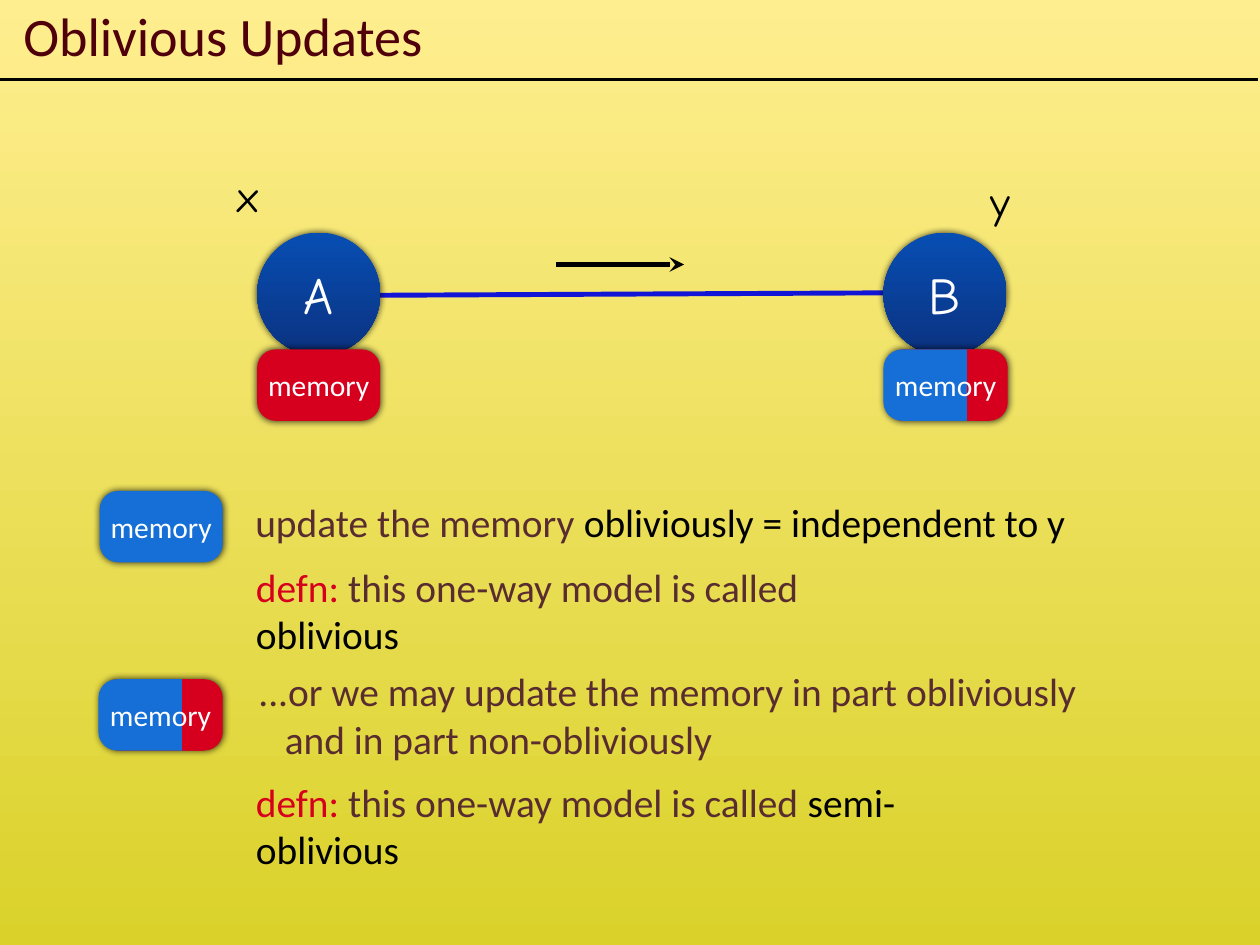
from pptx import Presentation
from pptx import util as u
from pptx.dml import color
from pptx.enum import shapes, text
from pptx.oxml import ns
from lxml import etree

BLACK = color.RGBColor(0x00, 0x00, 0x00)
WHITE = color.RGBColor(0xFF, 0xFF, 0xFF)
MAROON = color.RGBColor(0x50, 0x00, 0x0B)
BROWN = color.RGBColor(0x59, 0x2D, 0x30)
RED = color.RGBColor(0xD6, 0x00, 0x1E)
BLUE = color.RGBColor(0x15, 0x6F, 0xD6)
LINK_BLUE = color.RGBColor(0x12, 0x15, 0xD6)
NODE_TOP = color.RGBColor(0x07, 0x4E, 0xB3)
NODE_BOTTOM = color.RGBColor(0x0B, 0x32, 0x80)
SKY_TOP = color.RGBColor(0xFF, 0xEE, 0x8F)
SKY_BOTTOM = color.RGBColor(0xDA, 0xD2, 0x2B)

LEFT = text.PP_ALIGN.LEFT
CENTER = text.PP_ALIGN.CENTER
ROUNDED = shapes.MSO_SHAPE.ROUNDED_RECTANGLE
MEMORY_W, MEMORY_H = 100, 58
NODE_SIZE = 100
NODE_TOP_Y, NODE_MEMORY_Y = 189, 284


def write(box, runs, size, font="Calibri", align=LEFT):
    frame = box.text_frame
    frame.word_wrap = True
    frame.vertical_anchor = text.MSO_ANCHOR.MIDDLE
    frame.margin_left = frame.margin_right = 0
    frame.margin_top = frame.margin_bottom = 0
    para = frame.paragraphs[0]
    para.alignment = align
    for words, ink in runs:
        span = para.add_run()
        span.text = words
        span.font.size = u.Pt(size)
        span.font.name = font
        span.font.color.rgb = ink
    return para


def add_block(parent, kind, bounds, fills, shadow=True):
    block = parent.add_shape(kind, *map(u.Pt, bounds))
    if kind == ROUNDED:
        block.adjustments[0] = 0.26
    if len(fills) == 2:
        block.fill.gradient()
        block.fill.gradient_angle = 270
        for stop, shade in zip(block.fill.gradient_stops, fills):
            stop.color.rgb = shade
    else:
        block.fill.solid()
        block.fill.fore_color.rgb = fills[0]
    block.line.fill.background()
    block.shadow.inherit = False
    if shadow:
        effects = block.element.spPr.find(ns.qn("a:effectLst"))
        glow = etree.SubElement(effects, ns.qn("a:outerShdw"), blurRad=str(u.Pt(6)),
                                dist="0", dir="0", algn="ctr", rotWithShape="0")
        tint = etree.SubElement(glow, ns.qn("a:srgbClr"), val="000000")
        etree.SubElement(tint, ns.qn("a:alpha"), val="80000")
    return block


deck = Presentation()
deck.slide_width, deck.slide_height = u.Pt(1024), u.Pt(768)
page = deck.slides.add_slide(deck.slide_layouts[6])
sky = page.background.fill
sky.gradient()
sky.gradient_angle = 270
for stop, shade in zip(sky.gradient_stops, (SKY_TOP, SKY_BOTTOM)):
    stop.color.rgb = shade

lines = [
    ((0, 64.8, 1022, 64.8), BLACK, 2, False),
    ((304, 240, 719, 238), LINK_BLUE, 4, False),
    ((452, 215, 556, 215), BLACK, 4, True),
]
for ends, ink, width, arrow in lines:
    line = page.shapes.add_connector(shapes.MSO_CONNECTOR.STRAIGHT, *map(u.Pt, ends))
    line.line.color.rgb = ink
    line.line.width = u.Pt(width)
    properties = line.element.spPr
    if arrow:
        etree.SubElement(properties.find(ns.qn("a:ln")), ns.qn("a:tailEnd"), type="stealth")
    etree.SubElement(properties, ns.qn("a:effectLst"))

labels = [
    ((19, -1, 1008, 58), [("Oblivious Updates", MAROON)], 44, "Calibri"),
    ((193, 127, 30, 62), [("x", BLACK)], 36, "Comic Neue"),
    ((805, 132, 29, 62), [("y", BLACK)], 36, "Comic Neue"),
    ((207.5, 402, 667, 44),
     [("update the memory ", BROWN), ("obliviously = independent to y", BLACK)], 32, "Calibri"),
]
for top, width, term in [(474, 555, "oblivious"), (649, 620, "semi-oblivious")]:
    definition = [("defn: ", RED), ("this one-way model is called ", BROWN), (term, BLACK)]
    labels.append(((208, top, width, 44), definition, 32, "Calibri"))
for bounds, runs, size, font in labels:
    write(page.shapes.add_textbox(*map(u.Pt, bounds)), runs, size, font)

partial = page.shapes.add_textbox(*map(u.Pt, (210, 541, 814, 80)))
para = write(partial, [("...or we may update the memory in part obliviously", BROWN)], 32)
para.add_line_break()
write(partial, [("and in part non-obliviously", BROWN)], 32)
indent = para._p.get_or_add_pPr()
indent.set("marL", str(u.Pt(21.5)))
indent.set("indent", str(-u.Pt(21.5)))

for left, name in [(209, "A"), (718, "B")]:
    node = add_block(page.shapes, shapes.MSO_SHAPE.OVAL,
                     (left, NODE_TOP_Y, NODE_SIZE, NODE_SIZE), (NODE_TOP, NODE_BOTTOM))
    write(node, [(name, WHITE)], 42, "Comic Neue", CENTER)

for left, top, fill in [(209, NODE_MEMORY_Y, RED), (81, 399, BLUE)]:
    memory = add_block(page.shapes, ROUNDED, (left, top, MEMORY_W, MEMORY_H), (fill,))
    write(memory, [("memory", WHITE)], 24, align=CENTER)

for left, top in [(80, 552), (718, NODE_MEMORY_Y)]:
    split = page.shapes.add_group_shape().shapes
    add_block(split, ROUNDED, (left + 1, top, MEMORY_W, MEMORY_H), (RED,))
    add_block(split, ROUNDED, (left, top, 84, MEMORY_H), (BLUE,), shadow=False)
    add_block(split, shapes.MSO_SHAPE.RECTANGLE, (left + 68, top, 18, MEMORY_H), (RED,), shadow=False)
    caption = split.add_textbox(*map(u.Pt, (left + 5, top + 11, 91, 36)))
    write(caption, [("memory", WHITE)], 24, align=CENTER)

deck.save("out.pptx")
